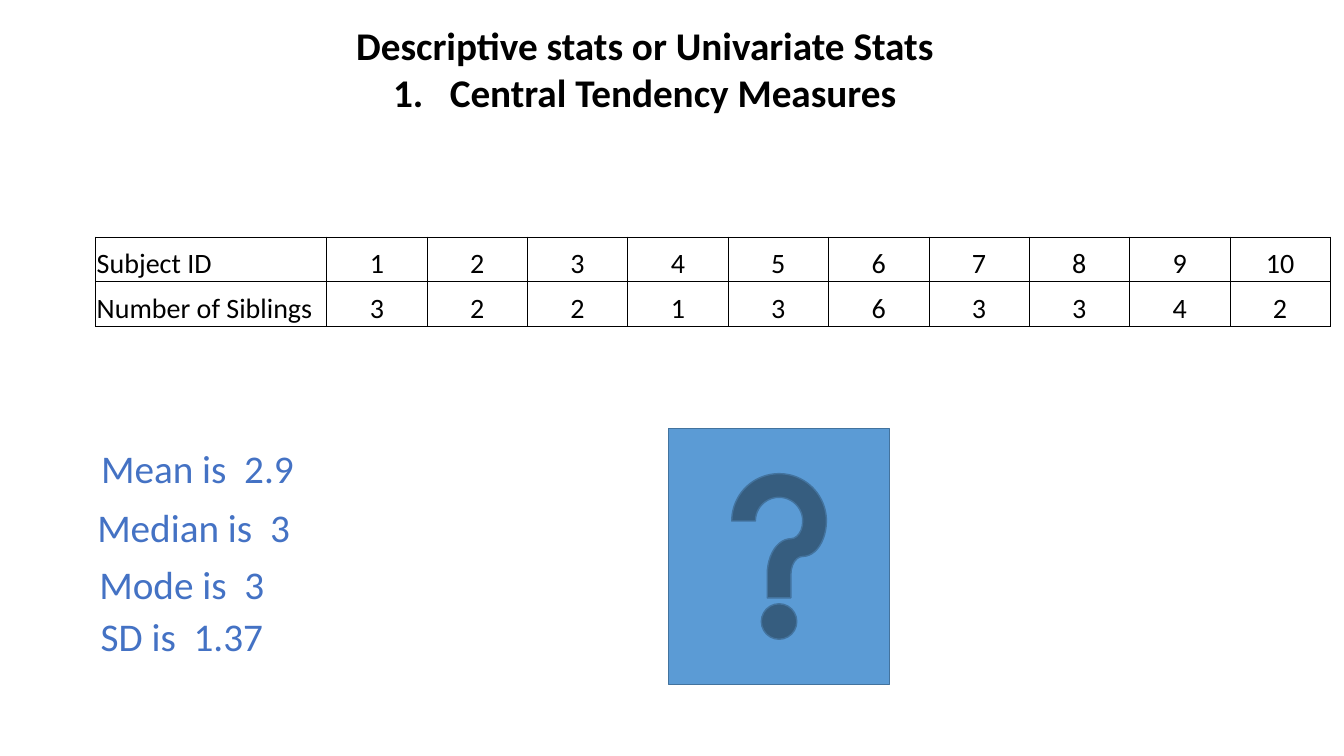
import pptx
import pptx.util
import pptx.oxml
import pptx.oxml.ns
import pptx.dml.color
import pptx.enum.shapes
import pptx.enum.text

COLS, ROWS = 160, 90
MID = pptx.enum.text.PP_ALIGN.CENTER
LOW = pptx.enum.text.MSO_ANCHOR.BOTTOM
HELP = pptx.enum.shapes.MSO_SHAPE.ACTION_BUTTON_HELP


def color(code):
    return pptx.dml.color.RGBColor.from_string(code)


def apply(item, form):
    for name, value in form.items():
        setattr(item, name, value)


class Page:
    face = "Calibri"
    ink = "000000"
    blue = "4472C4"

    def __init__(self, deck):
        self.wide = deck.slide_width / COLS
        self.high = deck.slide_height / ROWS
        self.slide = deck.slides.add_slide(deck.slide_layouts[6])

    def col(self, count):
        return round(count * self.wide)

    def row(self, count):
        return round(count * self.high)

    def box(self, left, top, width, height):
        return self.col(left), self.row(top), self.col(width), self.row(height)

    def label(self, para, words, size, ink, bold=False, align=None):
        para.alignment = align
        run = para.add_run()
        run.text = words
        apply(run.font, {"name": self.face, "size": pptx.util.Pt(size), "bold": bold})
        run.font.color.rgb = color(ink)

    def text(self, place, lines, **form):
        frame = self.slide.shapes.add_textbox(*self.box(*place)).text_frame
        apply(frame, {"word_wrap": True,
                      "auto_size": pptx.enum.text.MSO_AUTO_SIZE.SHAPE_TO_FIT_TEXT})
        for index, words in enumerate(lines):
            para = frame.add_paragraph() if index else frame.paragraphs[0]
            self.label(para, words, **form)
        return frame.paragraphs

    def number(self, para, indent):
        props = para._p.get_or_add_pPr()
        props.set("marL", str(self.col(indent)))
        props.set("indent", str(-self.col(indent)))
        mark = pptx.oxml.parse_xml(
            f'<a:buAutoNum {pptx.oxml.ns.nsdecls("a")} type="arabicPeriod"/>')
        props.append(mark)

    def border(self, cell, width):
        props = cell._tc.get_or_add_tcPr()
        for side in "LRTB":
            props.append(pptx.oxml.parse_xml(
                f'<a:ln{side} {pptx.oxml.ns.nsdecls("a")} w="{pptx.util.Pt(width)}">'
                f'<a:solidFill><a:srgbClr val="{self.ink}"/></a:solidFill></a:ln{side}>'))

    def table(self, left, top, widths, height, data, size):
        place = self.box(left, top, sum(widths), height * len(data))
        grid = self.slide.shapes.add_table(len(data), len(widths), *place).table
        apply(grid, {"first_row": False, "horz_banding": False})
        for column, width in zip(grid.columns, widths):
            column.width = self.col(width)
        pad = self.col(0.12)
        form = {"vertical_anchor": LOW, "margin_left": pad, "margin_right": pad,
                "margin_top": pad, "margin_bottom": 0}
        for line, values in zip(grid.rows, data):
            line.height = self.row(height)
            for index, (cell, value) in enumerate(zip(line.cells, values)):
                apply(cell, form)
                self.border(cell, 0.5)
                cell.fill.background()
                self.label(cell.text_frame.paragraphs[0], str(value), size,
                           self.ink, align=MID if index else None)

    def shape(self, kind, place, fill, edge, width):
        item = self.slide.shapes.add_shape(kind, *self.box(*place))
        item.shadow.inherit = False
        item.fill.solid()
        item.fill.fore_color.rgb = color(fill)
        item.line.color.rgb = color(edge)
        item.line.width = pptx.util.Pt(width)


def main():
    deck = pptx.Presentation()
    apply(deck, {"slide_width": pptx.util.Inches(13.33),
                 "slide_height": pptx.util.Inches(7.5)})
    page = Page(deck)

    title = page.text(
        (24.25, 2, 105, 12.5),
        [" Descriptive stats or Univariate Stats ", "Central Tendency Measures"],
        size=28, ink=page.ink, bold=True, align=MID)
    page.number(title[1], 6.75)

    people = ["Subject ID", *range(1, 11)]
    counts = ["Number of Siblings", 3, 2, 2, 1, 3, 6, 3, 3, 4, 2]
    page.table(11.4, 28.2, [27.5] + [11.95] * 10, 5.3, [people, counts], 20)

    results = [("Mean is  2.9", 10.85, 52.3), ("Median is  3", 10.4, 59.3),
               ("Mode is  3", 10.65, 66.15), ("SD is  1.37", 10.8, 72.25)]
    for words, left, top in results:
        page.text((left, top, 29, 6.85), [words], size=28, ink=page.blue)

    page.shape(HELP, (79.6, 51, 26.3, 30.5), "5B9BD5", "43739E", 1)
    deck.save("out.pptx")


if __name__ == "__main__":
    main()
